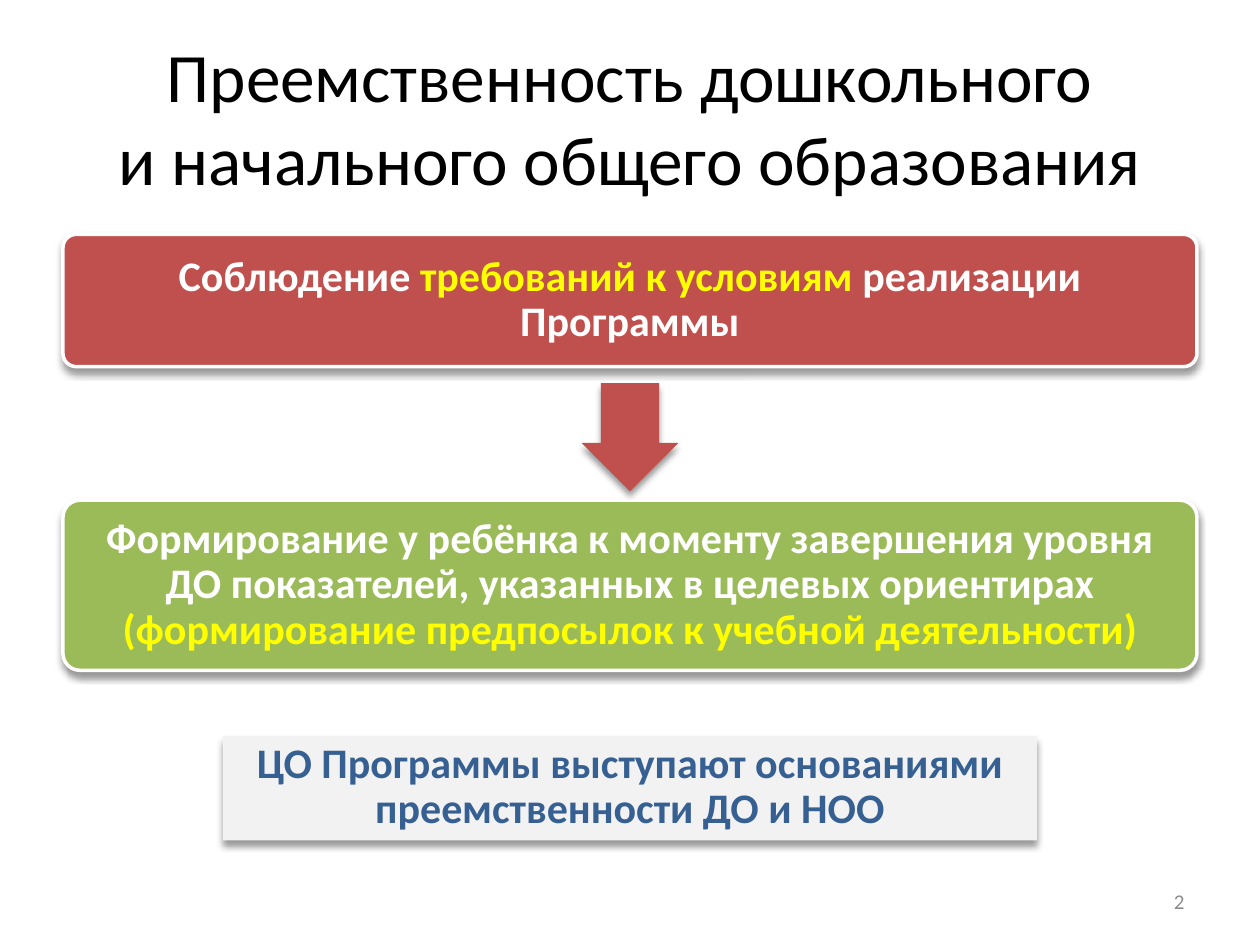
from lxml.etree import SubElement
from pptx import Presentation
from pptx.dml.color import RGBColor
from pptx.enum.shapes import MSO_SHAPE as Shape
from pptx.enum.text import MSO_ANCHOR as Anchor, PP_ALIGN as Align
from pptx.oxml.ns import qn
from pptx.util import Inches, Pt

FONT = "Calibri"
COLORS = {
    "black": "000000", "white": "FFFFFF", "yellow": "FFFF00", "gray": "8C8C8C",
    "red": "C0504D", "green": "9BBB59", "pale": "F2F2F2", "blue": "376092",
}

# Content
TITLE = ["Преемственность дошкольного", "и начального общего образования"]
STEPS = [  # top, height, fill, runs
    (1.86, 1.05, "red", [
        ("Соблюдение ", "white"),
        ("требований к условиям ", "yellow"),
        ("реализации Программы", "white"),
    ]),
    (3.97, 1.35, "green", [
        ("Формирование у ребёнка к моменту завершения уровня ДО показателей, "
         "указанных в целевых ориентирах ", "white"),
        ("(формирование предпосылок к учебной деятельности)", "yellow"),
    ]),
]
CONCLUSION = [("ЦО Программы выступают основаниями преемственности ДО и НОО", "blue")]
PAGE_NUMBER = "2"

SLIDE_WIDTH, MARGIN = 10, 0.5
CONTENT_WIDTH = SLIDE_WIDTH - 2 * MARGIN


def color(name):
    return RGBColor.from_string(COLORS[name])


def add_run(paragraph, text, size, color_name, bold=False):
    run = paragraph.add_run()
    run.text = text
    run.font.name, run.font.size, run.font.bold = FONT, Pt(size), bold
    run.font.color.rgb = color(color_name)


def add_shadow(shape):
    effects = SubElement(shape.element.spPr, qn("a:effectLst"))
    shadow = SubElement(effects, qn("a:outerShdw"), blurRad=str(Pt(4)), dist=str(Pt(3)),
                        dir="5400000", rotWithShape="0")
    black = SubElement(shadow, qn("a:srgbClr"), val=COLORS["black"])
    SubElement(black, qn("a:alpha"), val="40000")


def add_block(slide, kind, top, width, height, fill, outline=None):
    """Add a horizontally centred shape with a soft shadow."""
    left = (SLIDE_WIDTH - width) / 2
    shape = slide.shapes.add_shape(
        kind, Inches(left), Inches(top), Inches(width), Inches(height))
    shape.fill.solid()
    shape.fill.fore_color.rgb = color(fill)
    if outline:
        shape.line.color.rgb = color(outline)
        shape.line.width = Pt(2)
    else:
        shape.line.fill.background()
    add_shadow(shape)
    return shape


def write_block(shape, runs, anchor):
    frame = shape.text_frame
    frame.word_wrap = True
    frame.vertical_anchor = anchor
    paragraph = frame.paragraphs[0]
    paragraph.alignment = Align.CENTER
    paragraph.line_spacing = 0.9
    for text, color_name in runs:
        add_run(paragraph, text, 24, color_name, bold=True)


def main():
    presentation = Presentation()
    presentation.slide_width, presentation.slide_height = Inches(SLIDE_WIDTH), Inches(7.5)
    slide = presentation.slides.add_slide(presentation.slide_layouts[5])

    # Title
    title = slide.shapes.title
    title.left, title.top = Inches(MARGIN), Inches(0.3)
    title.width, title.height = Inches(CONTENT_WIDTH), Inches(1.25)
    title.text_frame.vertical_anchor = Anchor.MIDDLE
    paragraph = title.text_frame.paragraphs[0]
    paragraph.alignment = Align.CENTER
    for index, line in enumerate(TITLE):
        if index:
            paragraph.add_line_break()
        add_run(paragraph, line, 39.6, "black")

    # Two steps
    for top, height, fill, runs in STEPS:
        step = add_block(slide, Shape.ROUNDED_RECTANGLE, top, CONTENT_WIDTH, height,
                         fill, outline="white")
        step.adjustments[0] = 0.1
        write_block(step, runs, Anchor.MIDDLE)

    # Arrow between the steps
    arrow = add_block(slide, Shape.DOWN_ARROW, 3.04, 0.77, 0.86, "red")
    arrow.adjustments[0], arrow.adjustments[1] = 0.6, 0.5

    # Conclusion
    conclusion = add_block(slide, Shape.RECTANGLE, 5.84, 6.46, 0.83, "pale")
    write_block(conclusion, CONCLUSION, Anchor.TOP)

    # Page number
    number = slide.shapes.add_textbox(Inches(7.17), Inches(6.95), Inches(2.33), Inches(0.4))
    number.text_frame.word_wrap = True
    number.text_frame.vertical_anchor = Anchor.MIDDLE
    paragraph = number.text_frame.paragraphs[0]
    paragraph.alignment = Align.RIGHT
    add_run(paragraph, PAGE_NUMBER, 12, "gray")

    presentation.save("out.pptx")


if __name__ == "__main__":
    main()
